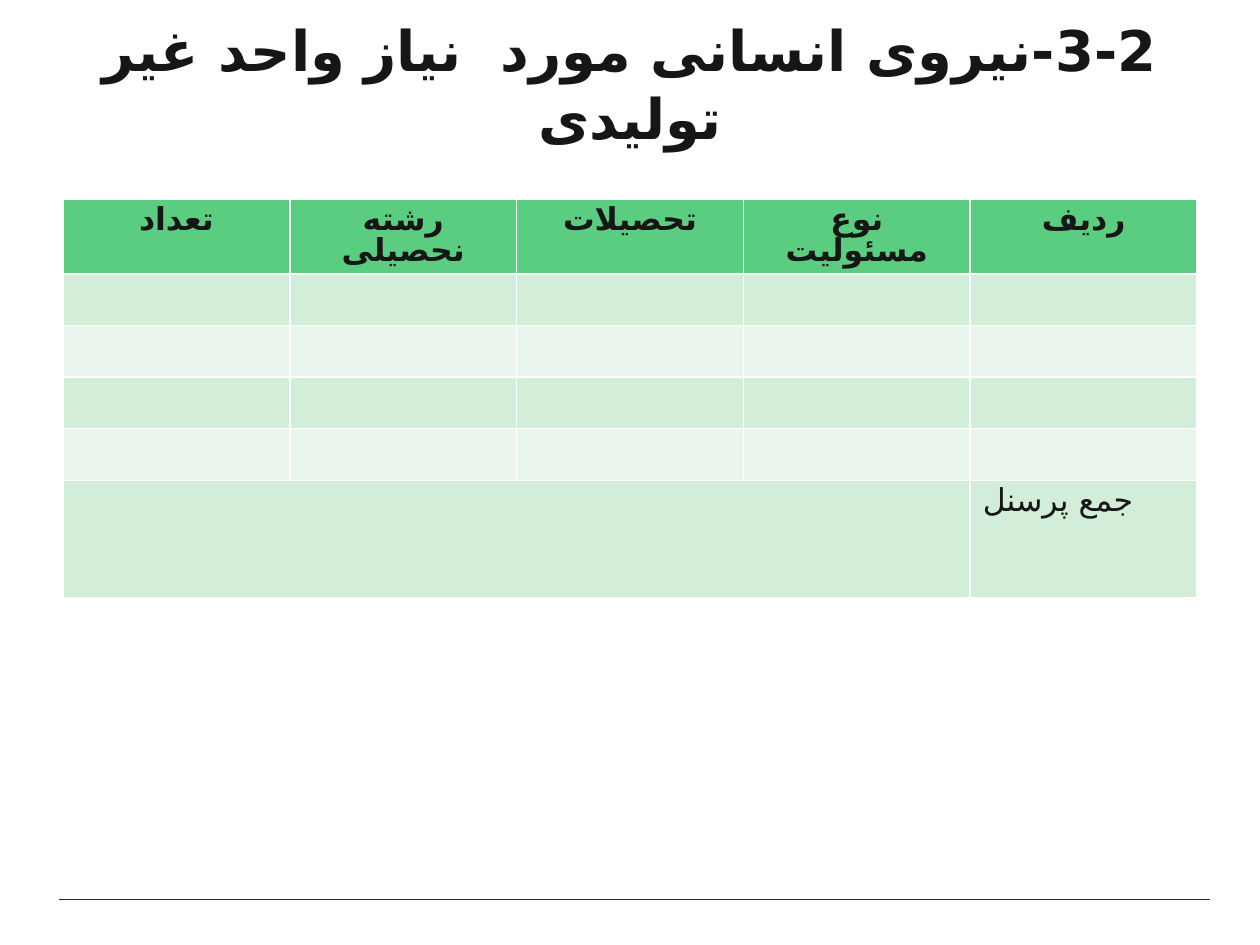
from lxml import etree
from pptx import Presentation
from pptx.dml.color import RGBColor
from pptx.enum import shapes, text
from pptx.oxml.ns import qn
from pptx.util import Inches, Pt

FONT = "DejaVu Sans"
INK, RULE = "161616", "2B166E"
HEADER_FILL, BAND_FILLS = "5BCD81", ("D2EDD8", "EAF6ED")
HEADINGS = ("تعداد", "رشته نحصیلی", "تحصیلات", "نوع مسئولیت", "ردیف")
ROW_HEIGHTS = (0.59, 0.41, 0.41, 0.41, 0.41, 0.93)


def color(value):
    return RGBColor.from_string(value)


def style_para(para, size, bold, align):
    para.alignment = align
    font = para.font
    font.name, font.size, font.bold = FONT, Pt(size), bold
    font.color.rgb = color(INK)
    # Persian letters use the complex-script font
    script = etree.SubElement(font._element, qn("a:cs"))
    script.set("typeface", FONT)


def add_title(page, left, top, width, height):
    title = page.shapes.title
    title.left, title.top = Inches(left), Inches(top)
    title.width, title.height = Inches(width), Inches(height)
    frame = title.text_frame
    frame.text = "3-2-نیروی انسانی مورد  نیاز واحد غیر تولیدی"
    frame.word_wrap = True
    frame.auto_size = text.MSO_AUTO_SIZE.NONE
    frame.vertical_anchor = text.MSO_ANCHOR.MIDDLE
    para = frame.paragraphs[0]
    style_para(para, 32, True, text.PP_ALIGN.CENTER)
    para._p.get_or_add_pPr().set("rtl", "1")


def write_cell(cell, words, bold, align):
    cell.text = words
    para = cell.text_frame.paragraphs[0]
    style_para(para, 18, bold, align)
    para.line_spacing = 0.85


def add_staff_table(page, left, top, width):
    frame = page.shapes.add_table(len(ROW_HEIGHTS), len(HEADINGS), Inches(left), Inches(top),
                                  Inches(width), Inches(sum(ROW_HEIGHTS)))
    table = frame.table
    for column in table.columns:
        column.width = Inches(width / len(HEADINGS))

    # Header and banded rows
    for index, height in enumerate(ROW_HEIGHTS):
        table.rows[index].height = Inches(height)
        fill = BAND_FILLS[(index - 1) % 2] if index else HEADER_FILL
        for cell in table.rows[index].cells:
            cell.fill.solid()
            cell.fill.fore_color.rgb = color(fill)
    for index, heading in enumerate(HEADINGS):
        write_cell(table.cell(0, index), heading, True, text.PP_ALIGN.CENTER)

    # Total row
    last_row, last_column = len(ROW_HEIGHTS) - 1, len(HEADINGS) - 1
    table.cell(last_row, 0).merge(table.cell(last_row, last_column - 1))
    write_cell(table.cell(last_row, last_column), "جمع پرسنل", False, text.PP_ALIGN.LEFT)


def add_footer_rule(page, left, top, width):
    rule = page.shapes.add_connector(shapes.MSO_CONNECTOR.STRAIGHT, Inches(left), Inches(top),
                                     Inches(left + width), Inches(top))
    rule.line.color.rgb = color(RULE)
    rule.line.width = Pt(0.75)
    etree.SubElement(rule._element.spPr, qn("a:effectLst"))


def main():
    deck = Presentation()
    deck.slide_width, deck.slide_height = Inches(10), Inches(7.5)
    page = deck.slides.add_slide(deck.slide_layouts[5])
    add_footer_rule(page, 0.47, 7.14, 9.13)
    add_title(page, 0.5, 0.35, 9, 0.62)
    add_staff_table(page, 0.5, 1.58, 9)
    deck.save("out.pptx")


if __name__ == "__main__":
    main()
